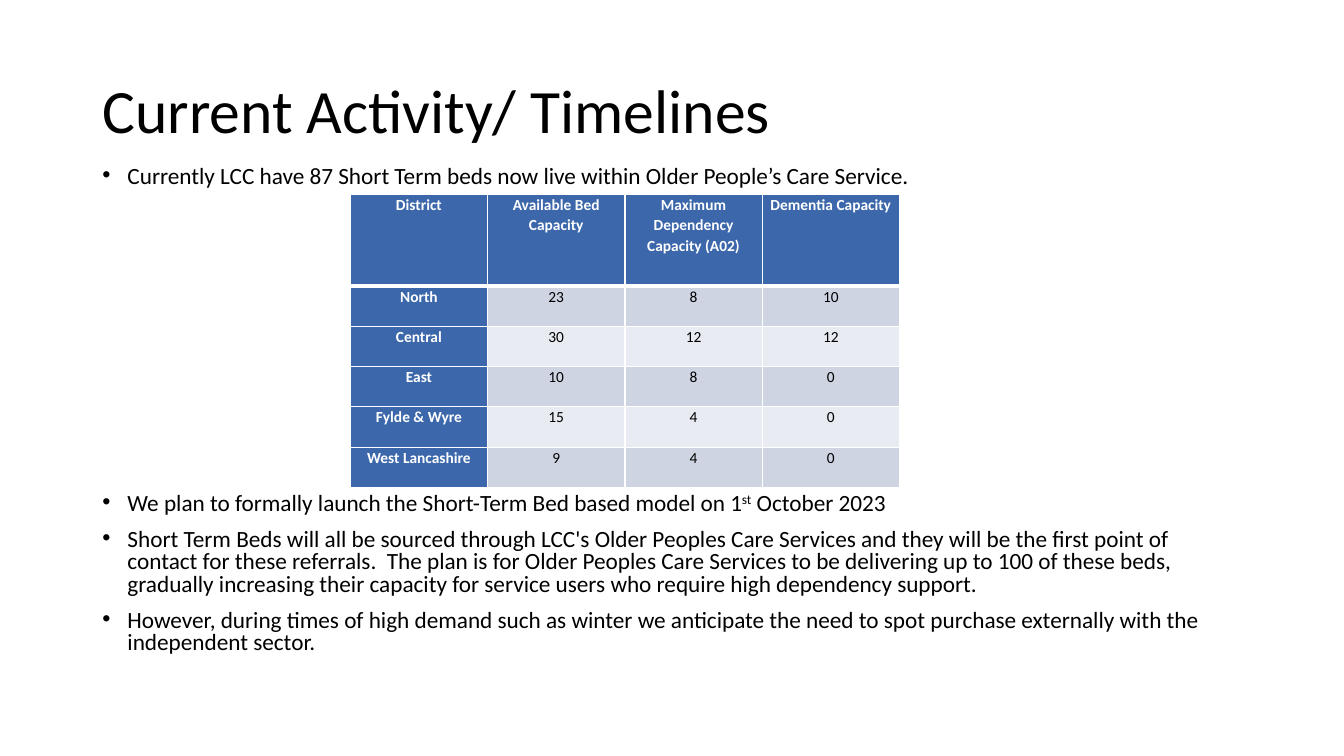
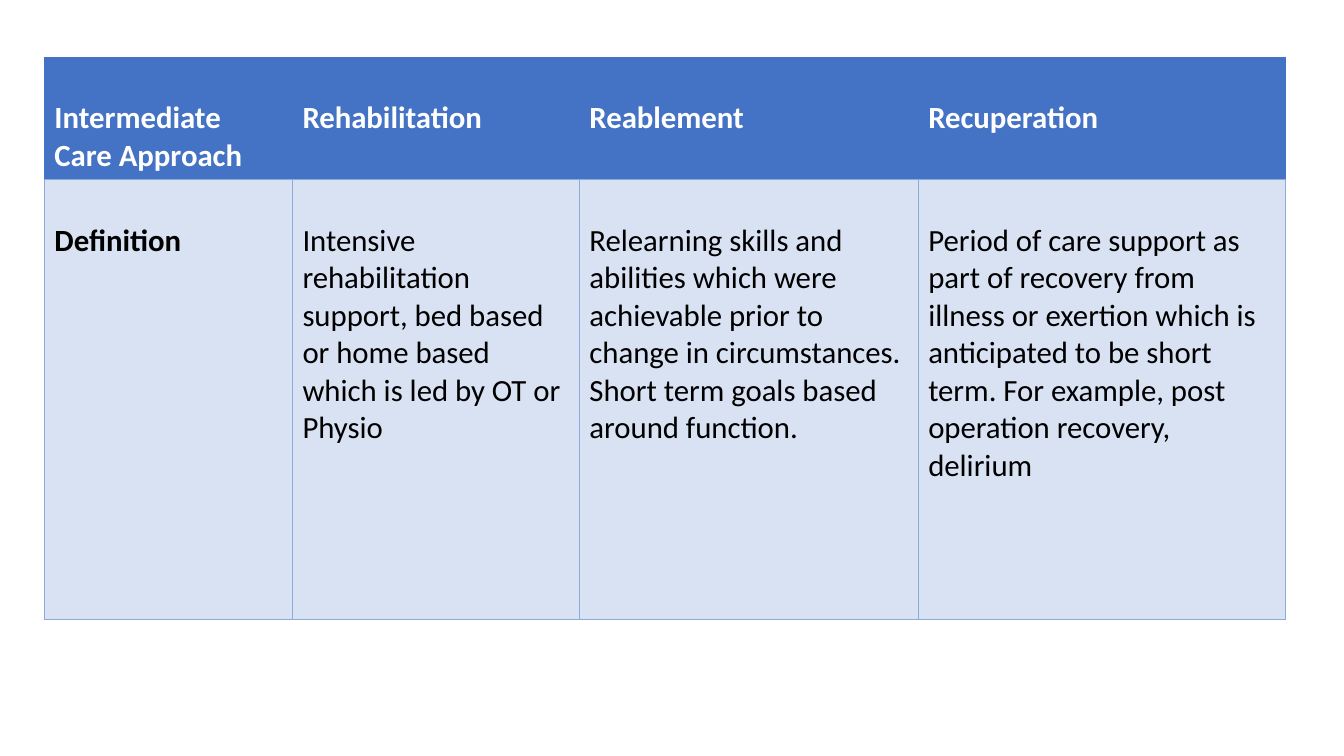
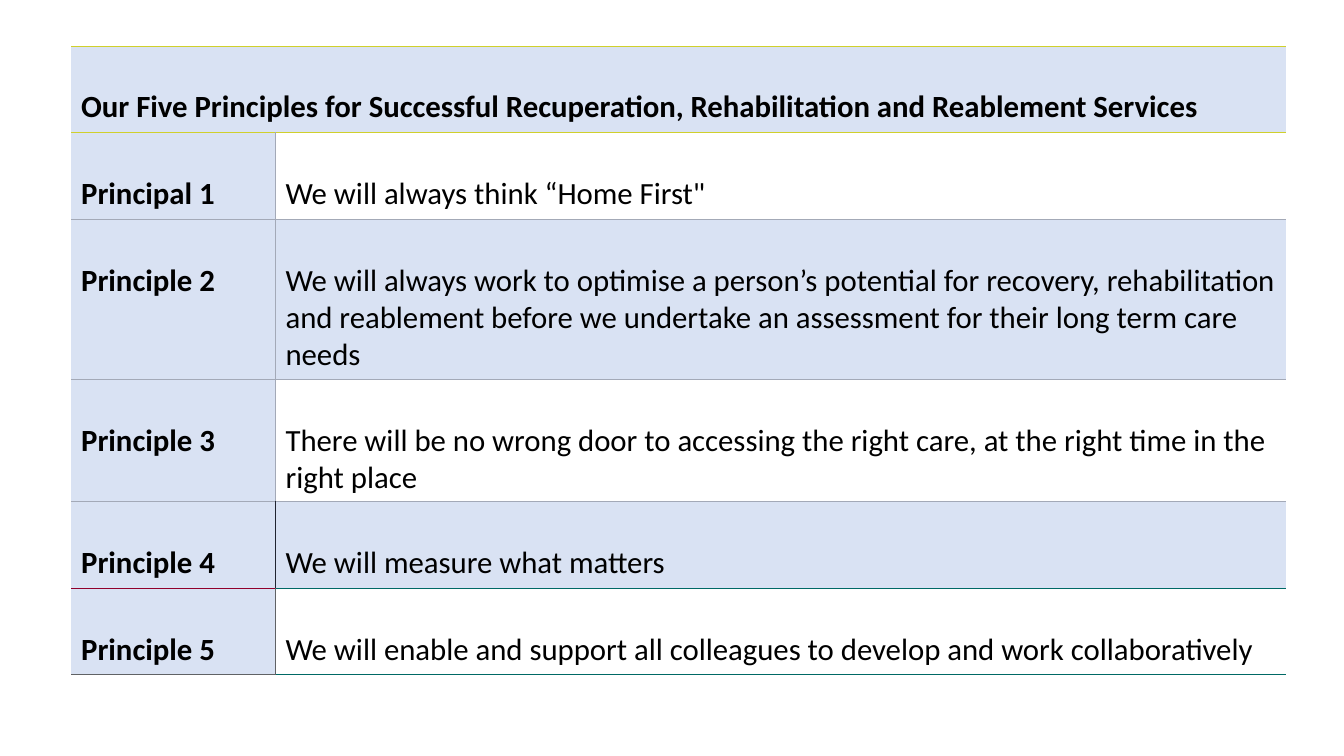
from dataclasses import dataclass

from lxml import etree
from pptx import Presentation
from pptx.dml.color import RGBColor
from pptx.enum import text
from pptx.oxml import ns
from pptx.util import Pt


@dataclass(frozen=True)
class Theme:
    font: str = "Calibri"
    black: str = "000000"
    white: str = "FFFFFF"
    district_blue: str = "3C68AB"
    band_dark: str = "CED4E2"
    band_light: str = "E8EBF1"
    header_blue: str = "4472C4"
    pale_blue: str = "D9E2F3"
    grid_blue: str = "8EAADB"
    lime: str = "D0D02C"
    grey: str = "A3A9B7"
    ink: str = "202430"
    crimson: str = "90002C"
    teal: str = "006965"
    slate: str = "606265"
    title_size: float = 44
    body_size: float = 16.6
    district_size: float = 11
    table_size: float = 22
    line: float = 0.75
    lead: float = 30.4


T = Theme()

TITLE = "Current Activity/ Timelines"
BULLETS_ABOVE = [["Currently LCC have 87 Short Term beds now live within Older People’s Care Service."]]
BULLETS_BELOW = [
    ["We plan to formally launch the Short-Term Bed based model on 1", "st", " October 2023"],
    ["Short Term Beds will all be sourced through LCC's Older Peoples Care Services and they will be "
     "the first point of contact for these referrals.  The plan is for Older Peoples Care Services to be "
     "delivering up to 100 of these beds, gradually increasing their capacity for service users who "
     "require high dependency support."],
    ["However, during times of high demand such as winter we anticipate the need to spot purchase "
     "externally with the independent sector."],
]
DISTRICTS = [
    ("District", "Available Bed Capacity", "Maximum Dependency Capacity (A02)", "Dementia Capacity"),
    ("North", "23", "8", "10"),
    ("Central", "30", "12", "12"),
    ("East", "10", "8", "0"),
    ("Fylde & Wyre", "15", "4", "0"),
    ("West Lancashire", "9", "4", "0"),
]
APPROACHES = [
    ("Intermediate Care Approach", "Rehabilitation", "Reablement", "Recuperation"),
    ("Definition",
     "Intensive rehabilitation support, bed based or home based which is led by OT or Physio",
     "Relearning skills and abilities which were achievable prior to change in circumstances. "
     "Short term goals based around function.",
     "Period of care support as part of recovery from illness or exertion which is anticipated to be "
     "short term. For example, post operation recovery, delirium"),
]
PRINCIPLES = [
    ("Our Five Principles for Successful Recuperation, Rehabilitation and Reablement Services", ""),
    ("Principal 1", "We will always think “Home First\""),
    ("Principle 2", "We will always work to optimise a person’s potential for recovery, rehabilitation and "
                    "reablement before we undertake an assessment for their long term care needs"),
    ("Principle 3", "There will be no wrong door to accessing the right care, at the right time in the "
                    "right place"),
    ("Principle 4", "We will measure what matters"),
    ("Principle 5", "We will enable and support all colleagues to develop and work collaboratively"),
]
PRINCIPLE_RULES = [(T.lime, T.lime), (T.grey, T.grey), (T.grey, T.grey),
                   (T.grey, T.grey), (T.crimson, T.teal), (T.slate, T.teal)]
PRINCIPLE_DIVIDERS = [None, T.grey, T.grey, T.grey, T.ink, T.slate]


def format_font(font, size, color=T.black, bold=False):
    font.name = T.font
    font.size = Pt(size)
    font.bold = bold
    font.color.rgb = RGBColor.from_string(color)


def set_borders(cell, borders):
    properties = cell._tc.get_or_add_tcPr()
    for side in "LRTB":
        color, width = borders.get(side) or (None, T.line)
        line = etree.SubElement(properties, ns.qn(f"a:ln{side}"), w=str(int(Pt(width))))
        if color:
            fill = etree.SubElement(line, ns.qn("a:solidFill"))
            etree.SubElement(fill, ns.qn("a:srgbClr"), val=color)
        else:
            etree.SubElement(line, ns.qn("a:noFill"))


def add_grid(slide, corner, widths, heights, contents, look):
    frame = slide.shapes.add_table(len(heights), len(widths), Pt(corner[0]), Pt(corner[1]),
                                   Pt(sum(widths)), Pt(sum(heights)))
    table = frame.table
    for column, width in zip(table.columns, widths):
        column.width = Pt(width)
    for row, height in zip(table.rows, heights):
        row.height = Pt(height)
    for r, words in enumerate(contents):
        for c, word in enumerate(words):
            cell, style = table.cell(r, c), look(r, c)
            set_borders(cell, style["borders"])
            if style["fill"]:
                cell.fill.solid()
                cell.fill.fore_color.rgb = RGBColor.from_string(style["fill"])
            else:
                cell.fill.background()
            side, top, bottom = style["margins"]
            cell.margin_left = cell.margin_right = Pt(side)
            cell.margin_top, cell.margin_bottom = Pt(top), Pt(bottom)
            paragraph = cell.text_frame.paragraphs[0]
            paragraph.text = word
            paragraph.alignment = style.get("align", text.PP_ALIGN.LEFT)
            paragraph.line_spacing = style.get("spacing", 1.0)
            format_font(paragraph.font, style["size"], style["color"], style["bold"])
            for run in paragraph.runs:
                format_font(run.font, style["size"], style["color"], style["bold"])
    return table


def district_look(r, c):
    heading = r == 0 or c == 0
    thin, thick = (T.white, 1), (T.white, 3)
    band = T.band_dark if r % 2 else T.band_light
    return dict(fill=T.district_blue if heading else band,
                color=T.white if heading else T.black, bold=heading,
                size=T.district_size, margins=(5, 0, 0), spacing=1.07, align=text.PP_ALIGN.CENTER,
                borders=dict(L=thin, R=thin, T=thick if r == 1 else thin, B=thick if r == 0 else thin))


def approach_look(r, c):
    grid, edge = (T.grid_blue, T.line), (T.header_blue, T.line)
    if r == 0:
        borders = dict(T=edge, B=grid, L=edge if c == 0 else None, R=edge if c == 3 else None)
    else:
        borders = dict.fromkeys("LRTB", grid)
    return dict(fill=T.pale_blue if r else T.header_blue, color=T.black if r else T.white,
                bold=r == 0 or c == 0, size=T.table_size, margins=(7.2, T.lead, 3.6), borders=borders)


def principle_look(r, c):
    above = PRINCIPLE_RULES[r - 1][c] if r else T.lime
    divider = PRINCIPLE_DIVIDERS[r]
    borders = dict(T=(above, T.line), B=(PRINCIPLE_RULES[r][c], T.line))
    if divider:
        borders["L" if c else "R"] = (divider, T.line)
    return dict(fill=T.pale_blue if c == 0 or r % 2 == 0 else None, color=T.black, bold=c == 0,
                size=T.table_size, margins=(7.2, T.lead, 3.6), borders=borders)


def add_bullets(slide, top, height, bullets):
    frame = slide.shapes.add_textbox(Pt(66), Pt(top), Pt(828), Pt(height)).text_frame
    frame.word_wrap = True
    for i, pieces in enumerate(bullets):
        paragraph = frame.add_paragraph() if i else frame.paragraphs[0]
        properties = paragraph._p.get_or_add_pPr()
        properties.set("marL", str(int(Pt(18))))
        properties.set("indent", str(int(Pt(-18))))
        etree.SubElement(properties, ns.qn("a:buFont"), typeface="Arial")
        etree.SubElement(properties, ns.qn("a:buChar"), char="•")
        paragraph.line_spacing = 0.8
        paragraph.space_before = Pt(10 if i else 0)
        for piece in pieces:
            run = paragraph.add_run()
            run.text = piece
            format_font(run.font, T.body_size)
            if piece == "st":
                run._r.get_or_add_rPr().set("baseline", "30000")


def add_title(slide, words):
    title = slide.shapes.title
    title.left, title.top, title.width, title.height = Pt(66), Pt(28.8), Pt(828), Pt(104.4)
    title.text_frame.text = words
    title.text_frame.vertical_anchor = text.MSO_ANCHOR.MIDDLE
    paragraph = title.text_frame.paragraphs[0]
    paragraph.alignment = text.PP_ALIGN.LEFT
    paragraph.line_spacing = 0.9
    format_font(paragraph.runs[0].font, T.title_size)


def main():
    deck = Presentation()
    deck.slide_width, deck.slide_height = Pt(960), Pt(540)
    title_only, blank = deck.slide_layouts[5], deck.slide_layouts[6]

    activity = deck.slides.add_slide(title_only)
    add_title(activity, TITLE)
    add_bullets(activity, 115.2, 26, BULLETS_ABOVE)
    add_bullets(activity, 348.8, 140, BULLETS_BELOW)
    add_grid(activity, (250.2, 138.8), [98.1] * 4, [65.4] + [28.8] * 5, DISTRICTS, district_look)

    approaches = deck.slides.add_slide(blank)
    add_grid(approaches, (31.7, 40.8), [177.2, 205, 242, 262.2], [87.4, 314], APPROACHES, approach_look)

    principles = deck.slides.add_slide(blank)
    table = add_grid(principles, (50.8, 33), [146, 721.6], [61.8, 61.8, 114.4, 87.4, 61.8, 61.8],
                     PRINCIPLES, principle_look)
    table.cell(0, 0).merge(table.cell(0, 1))

    deck.save("out.pptx")


if __name__ == "__main__":
    main()
